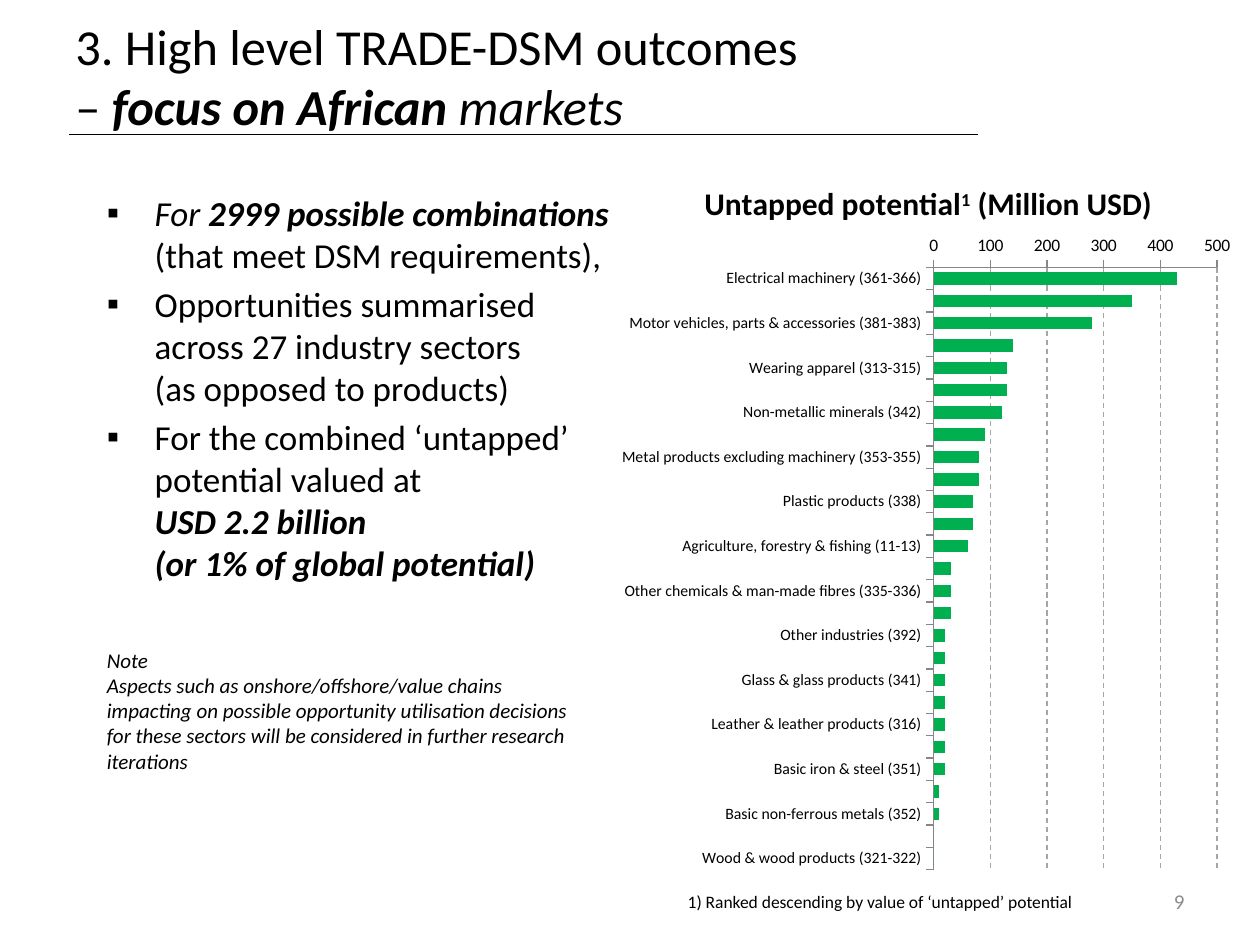
import lxml.etree
import pptx
import pptx.chart.data
import pptx.dml.color
import pptx.enum.chart
import pptx.enum.dml
import pptx.enum.shapes
import pptx.enum.text
import pptx.oxml
import pptx.oxml.ns
import pptx.util
from dataclasses import dataclass

Inches, Pt = pptx.util.Inches, pptx.util.Pt
RGBColor = pptx.dml.color.RGBColor
Anchor, Align = pptx.enum.text.MSO_ANCHOR, pptx.enum.text.PP_ALIGN
qn = pptx.oxml.ns.qn


@dataclass(frozen=True)
class Theme:
    font: str = "Calibri"
    text: RGBColor = RGBColor(0, 0, 0)
    muted: RGBColor = RGBColor(0x8C, 0x8C, 0x8C)
    axis: RGBColor = RGBColor(0x86, 0x86, 0x86)
    grid: RGBColor = RGBColor(0xA6, 0xA6, 0xA6)
    bar: RGBColor = RGBColor(0x00, 0xB0, 0x50)
    title_size: float = 28.8
    body_size: float = 20
    chart_title_size: float = 18
    note_size: float = 12
    label_size: float = 10
    category_size: float = 9


THEME = Theme()

# Each run is (text, style): b = bold, i = italic; "\n" is a line break.
TITLE = [("3. High level TRADE-DSM outcomes\n– ", ""), ("focus on African ", "bi"), ("markets", "i")]
BULLETS = [
    [("For ", "i"), ("2999 possible combinations ", "bi"), ("(that meet DSM requirements),", "")],
    [("Opportunities summarised across 27 industry sectors\n(as opposed to products)", "")],
    [("For the combined ‘untapped’ potential valued at\n", ""),
     ("USD 2.2 billion\n(or 1% of global potential)", "bi")],
]
NOTE = [("Note\nAspects such as onshore/offshore/value chains\n"
         "impacting on possible opportunity utilisation decisions\n"
         "for these sectors will be considered in further research iterations", "i")]
FOOTNOTE = [("1) Ranked descending by value of ‘untapped’ potential", "")]
PAGE_NUMBER = [("9", "")]

CHART_TITLE = [("Untapped potential", False), ("1", True), (" (Million USD)", False)]
SECTORS = [
    ("Electrical machinery (361-366)", 430),
    ("Food (301-304)", 350),
    ("Motor vehicles, parts & accessories (381-383)", 280),
    ("Machinery & equipment (356-359)", 140),
    ("Wearing apparel (313-315)", 130),
    ("Other transport equipment (384-387)", 130),
    ("Non-metallic minerals (342)", 120),
    ("Television, radio & communication equipment (371-373)", 90),
    ("Metal products excluding machinery (353-355)", 80),
    ("Professional & scientific equipment (374-376)", 80),
    ("Plastic products (338)", 70),
    ("Basic chemicals (334)", 70),
    ("Agriculture, forestry & fishing (11-13)", 60),
    ("Paper & paper products (323)", 30),
    ("Other chemicals & man-made fibres (335-336)", 30),
    ("Textiles (311-312)", 30),
    ("Other industries (392)", 20),
    ("Other mining (22, 24, 25, 29, 39)", 20),
    ("Glass & glass products (341)", 20),
    ("Furniture (391)", 20),
    ("Leather & leather products (316)", 20),
    ("Tobacco (306)", 20),
    ("Basic iron & steel (351)", 20),
    ("Footwear (317)", 10),
    ("Basic non-ferrous metals (352)", 10),
    ("Rubber products (337)", 0),
    ("Wood & wood products (321-322)", 0),
]


def set_font(font, size, color=THEME.text):
    font.name, font.size, font.color.rgb = THEME.font, Pt(size), color


def write_runs(paragraph, runs, size, color=THEME.text):
    set_font(paragraph.font, size, color)
    for text, style in runs:
        for index, line in enumerate(text.split("\n")):
            if index:
                paragraph.add_line_break()
            if line:
                run = paragraph.add_run()
                run.text = line
                set_font(run.font, size, color)
                run.font.bold, run.font.italic = "b" in style, "i" in style


def add_text_frame(slide, box, anchor=Anchor.TOP, wrap=True):
    frame = slide.shapes.add_textbox(*map(Inches, box)).text_frame
    frame.word_wrap, frame.vertical_anchor = wrap, anchor
    return frame


def indent(paragraph, left, hanging=0, bullet=None):
    properties = paragraph._p.get_or_add_pPr()
    properties.set("marL", str(Inches(left)))
    properties.set("indent", str(-Inches(hanging)))
    if bullet:
        lxml.etree.SubElement(properties, qn("a:buFont"), typeface="Arial")
        lxml.etree.SubElement(properties, qn("a:buChar"), char=bullet)


def add_body(slide):
    frame = add_text_frame(slide, (0.5, 1.47, 4.5, 5.5))
    for index, runs in enumerate(BULLETS):
        paragraph = frame.add_paragraph() if index else frame.paragraphs[0]
        if index:
            paragraph.space_before = Pt(4)
        indent(paragraph, 0.63, 0.38, "▪")
        write_runs(paragraph, runs, THEME.body_size)
    note = frame.add_paragraph()
    note.space_before = Pt(36.5)
    indent(note, 0.25)
    write_runs(note, NOTE, THEME.note_size)


def add_rule(slide):
    rule = slide.shapes.add_connector(pptx.enum.shapes.MSO_CONNECTOR.STRAIGHT,
                                      *map(Inches, (0.55, 1.07, 7.76, 1.07)))
    rule.line.color.rgb, rule.line.width = THEME.text, Pt(0.75)
    lxml.etree.SubElement(rule._element.spPr, qn("a:effectLst"))


def layout_xml(**settings):
    """Manual chart layout; settings are c:manualLayout children in schema order."""
    children = "".join(f'<c:{name} val="{value}"/>' for name, value in settings.items())
    return pptx.oxml.parse_xml(f'<c:layout {pptx.oxml.ns.nsdecls("c")}>'
                               f"<c:manualLayout>{children}</c:manualLayout></c:layout>")


def place(parent, layout, after=None):
    for old in parent.findall(qn("c:layout")):
        parent.remove(old)
    parent.insert(0 if after is None else parent.index(after) + 1, layout)


def add_chart(slide):
    data = pptx.chart.data.CategoryChartData(number_format="#,##0")
    data.categories = [name for name, _ in SECTORS]
    data.add_series("Series 1", [value for _, value in SECTORS])
    chart = slide.shapes.add_chart(pptx.enum.chart.XL_CHART_TYPE.BAR_CLUSTERED,
                                   *map(Inches, (4.86, 1.19, 5, 5.83)), data).chart
    set_font(chart.font, THEME.label_size)
    chart.has_legend = False

    paragraph = chart.chart_title.text_frame.paragraphs[0]
    for text, raised in CHART_TITLE:
        run = paragraph.add_run()
        run.text = text
        set_font(run.font, THEME.chart_title_size)
        run.font.bold = True
        if raised:
            run.font._element.set("baseline", "30000")
    title = chart.chart_title._element
    place(title, layout_xml(xMode="edge", yMode="edge", x=0.14, y=0.04), title.find(qn("c:tx")))
    chart.chart_title.include_in_layout = False

    plot = chart.plots[0]
    plot.gap_width, plot.overlap, plot.vary_by_categories = 79, -20, False
    fill = plot.series[0].format.fill
    fill.solid()
    fill.fore_color.rgb = THEME.bar
    place(chart._chartSpace.chart.plotArea,
          layout_xml(layoutTarget="inner", xMode="edge", yMode="edge", x=0.51, y=0.16, w=0.45, h=0.82))

    categories, values = chart.category_axis, chart.value_axis
    categories.reverse_order = True
    set_font(categories.tick_labels.font, THEME.category_size)
    set_font(values.tick_labels.font, THEME.label_size)
    values.minimum_scale, values.maximum_scale, values.major_unit = 0, 500, 100
    for axis in (categories, values):
        axis.major_tick_mark = pptx.enum.chart.XL_TICK_MARK.OUTSIDE
        axis.format.line.color.rgb, axis.format.line.width = THEME.axis, Pt(0.75)
    grid = values.major_gridlines.format.line
    grid.color.rgb, grid.width = THEME.grid, Pt(0.75)
    grid.dash_style = pptx.enum.dml.MSO_LINE.DASH


def main():
    presentation = pptx.Presentation()
    presentation.slide_width, presentation.slide_height = Inches(10), Inches(7.5)
    slide = presentation.slides.add_slide(presentation.slide_layouts[6])

    add_rule(slide)
    title = add_text_frame(slide, (0.5, 0.13, 9, 0.94), Anchor.MIDDLE)
    write_runs(title.paragraphs[0], TITLE, THEME.title_size)
    add_body(slide)
    page_number = add_text_frame(slide, (7.17, 6.95, 2.33, 0.4), Anchor.MIDDLE).paragraphs[0]
    page_number.alignment = Align.RIGHT
    write_runs(page_number, PAGE_NUMBER, THEME.note_size, THEME.muted)
    footnote = add_text_frame(slide, (5.36, 7.02, 3.3, 0.27), wrap=False)
    write_runs(footnote.paragraphs[0], FOOTNOTE, THEME.label_size)
    add_chart(slide)
    presentation.save("out.pptx")


if __name__ == "__main__":
    main()
